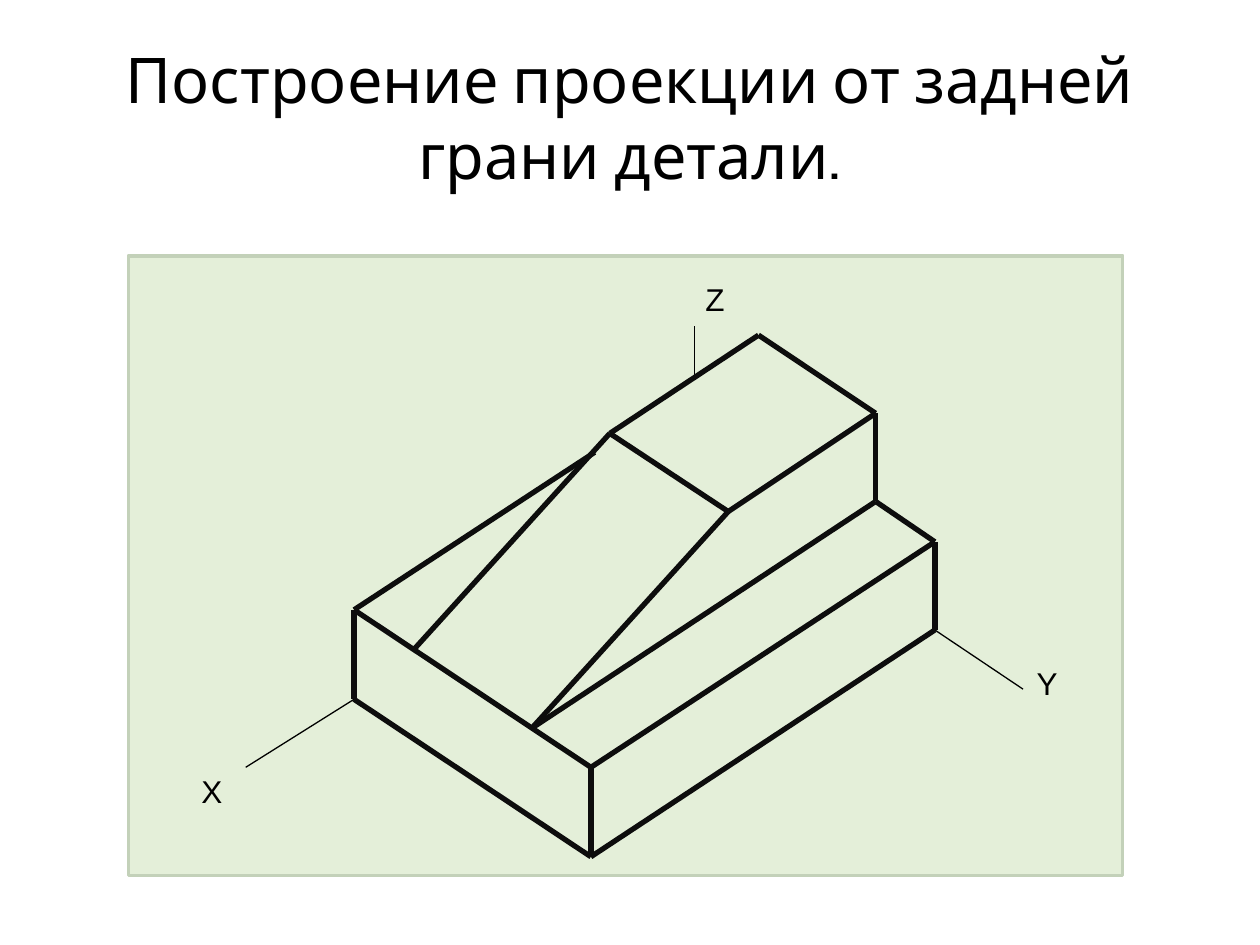
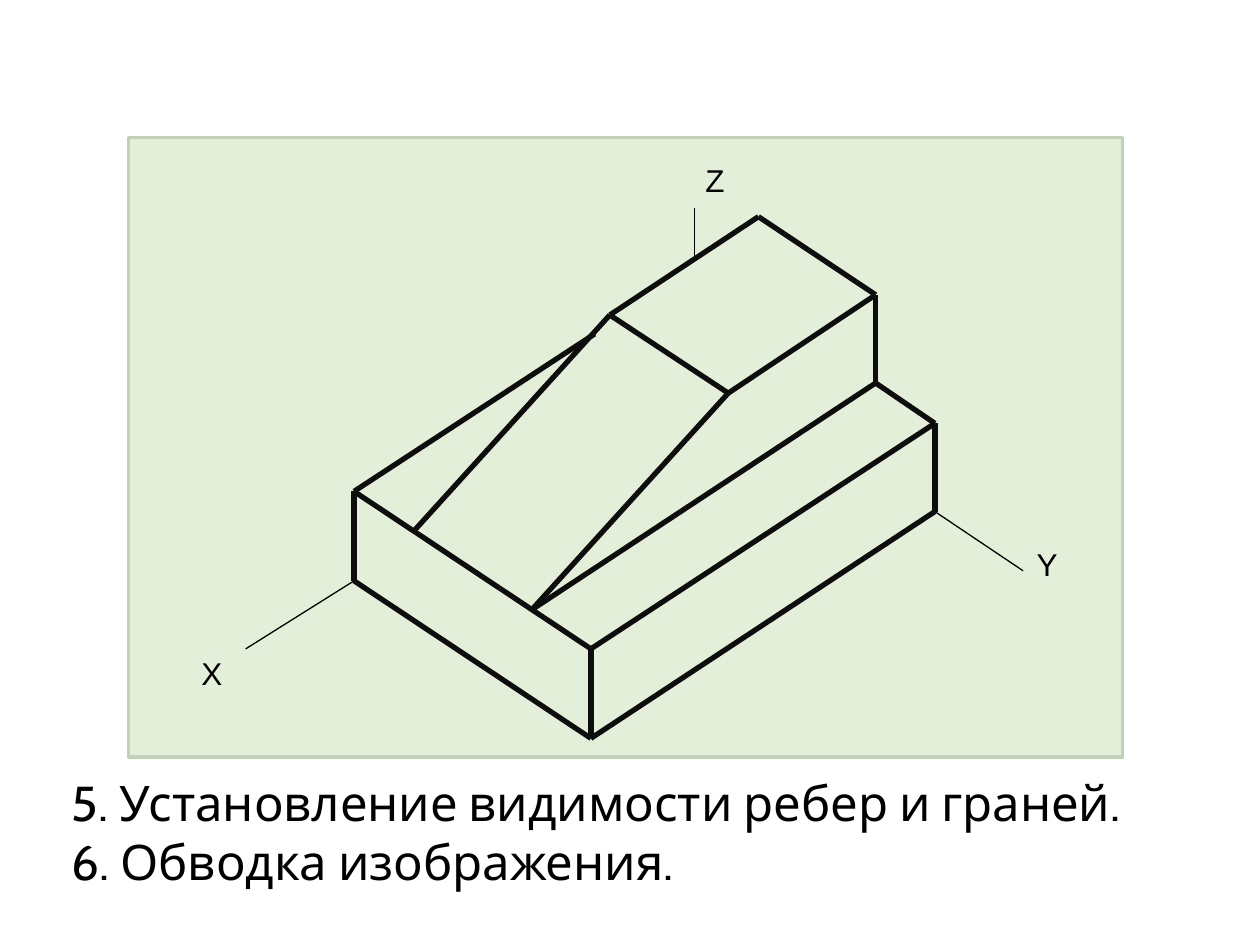
"""Build two slides that show an axonometric drawing of a stepped part."""
from typing import NamedTuple

from lxml import etree
from pptx import Presentation
from pptx import util as u
from pptx.dml.color import RGBColor
from pptx.enum import shapes as sh, text as tx
from pptx.oxml.ns import qn

COLORS = {"panel": "E4EFD9", "frame": "C3D1B9", "edge": "0D0D0D", "text": "000000"}
PANEL = (1.02, 7.89, 4.92)


class Point(NamedTuple):
    x: float
    y: float


class Edge(NamedTuple):
    start: Point
    end: Point


class Label(NamedTuple):
    text: str
    x: float
    y: float


class Block(NamedTuple):
    lines: list[str]
    box: tuple[float, float, float, float]
    size: int
    align: tx.PP_ALIGN


class Page(NamedTuple):
    top: float
    block: Block


BASE_LEFT = Point(1.79, 3.52)
BASE_FRONT = Point(3.67, 4.77)
BASE_RIGHT = Point(6.4, 2.97)
TOP_LEFT = Point(1.79, 2.81)
TOP_FRONT = Point(3.67, 4.06)
TOP_RIGHT = Point(6.4, 2.27)
TOP_HIDE = Point(3.7, 1.56)
STEP_BACK = Point(5.93, 1.95)
RAMP_LEFT = Point(2.26, 3.13)
RAMP_RIGHT = Point(3.2, 3.75)
ROOF_LEFT = Point(3.82, 1.41)
ROOF_FRONT = Point(4.76, 2.03)
ROOF_RIGHT = Point(5.93, 1.25)
ROOF_BACK = Point(5.0, 0.63)

AXES = [
    Edge(Point(4.49, 0.56), Point(4.49, 0.95)),
    Edge(Point(0.93, 4.06), BASE_LEFT),
    Edge(Point(7.1, 3.44), BASE_RIGHT),
]
EDGES = [
    Edge(BASE_RIGHT, TOP_RIGHT),
    Edge(STEP_BACK, TOP_RIGHT),
    Edge(STEP_BACK, ROOF_RIGHT),
    Edge(ROOF_RIGHT, ROOF_BACK),
    Edge(TOP_HIDE, TOP_LEFT),
    Edge(STEP_BACK, RAMP_RIGHT),
    Edge(TOP_RIGHT, TOP_FRONT),
    Edge(BASE_RIGHT, BASE_FRONT),
    Edge(ROOF_BACK, ROOF_LEFT),
    Edge(ROOF_RIGHT, ROOF_FRONT),
    Edge(ROOF_FRONT, ROOF_LEFT),
    Edge(TOP_FRONT, TOP_LEFT),
    Edge(BASE_FRONT, BASE_LEFT),
    Edge(TOP_LEFT, BASE_LEFT),
    Edge(TOP_FRONT, BASE_FRONT),
    Edge(ROOF_LEFT, RAMP_LEFT),
    Edge(ROOF_FRONT, RAMP_RIGHT),
]
LABELS = [Label("Z", 4.48, 0.14), Label("Y", 7.11, 3.19), Label("Х", 0.48, 4.05)]

PAGES = [
    Page(2.03, Block(["Построение проекции от задней грани детали."],
                     (0.5, 0.3, 9, 1.25), 36, tx.PP_ALIGN.CENTER)),
    Page(1.09, Block(["5. Установление видимости ребер и граней.", "6. Обводка изображения."],
                     (0.47, 6.1, 9, 1), 28, tx.PP_ALIGN.LEFT)),
]


def color(name: str) -> RGBColor:
    return RGBColor.from_string(COLORS[name])


def draw_text(slide, block: Block, font: str, wrap: bool = True) -> None:
    box = slide.shapes.add_textbox(*map(u.Inches, block.box))
    frame = box.text_frame
    frame.text = "\n".join(block.lines)
    frame.word_wrap = wrap
    frame.vertical_anchor = tx.MSO_ANCHOR.MIDDLE if wrap else tx.MSO_ANCHOR.TOP
    if not wrap:
        frame.auto_size = tx.MSO_AUTO_SIZE.SHAPE_TO_FIT_TEXT
    for par in frame.paragraphs:
        par.alignment = block.align
        for run in par.runs:
            run.font.name = font
            run.font.size = u.Pt(block.size)
            run.font.color.rgb = color("text")


def draw_panel(slide, top: float) -> None:
    left, width, height = PANEL
    panel = slide.shapes.add_shape(sh.MSO_SHAPE.RECTANGLE, *map(u.Inches, (left, top, width, height)))
    panel.shadow.inherit = False
    panel.fill.solid()
    panel.fill.fore_color.rgb = color("panel")
    panel.line.color.rgb = color("frame")
    panel.line.width = u.Pt(2)


def draw_edges(slide, edges: list[Edge], top: float, tone: str, width: float) -> None:
    group = slide.shapes.add_group_shape()
    left = PANEL[0]
    for start, end in edges:
        ends = (left + start.x, top + start.y, left + end.x, top + end.y)
        line = group.shapes.add_connector(sh.MSO_CONNECTOR.STRAIGHT, *map(u.Inches, ends))
        line.line.color.rgb = color(tone)
        line.line.width = u.Pt(width)
        etree.SubElement(line._element.spPr, qn("a:effectLst"))


def draw_part(slide, top: float) -> None:
    draw_panel(slide, top)
    draw_edges(slide, AXES, top, "text", 0.75)
    for label in LABELS:
        box = (PANEL[0] + label.x, top + label.y, 0.37, 0.4)
        draw_text(slide, Block([label.text], box, 18, tx.PP_ALIGN.LEFT), "Arial", wrap=False)
    draw_edges(slide, EDGES, top, "edge", 3)


def main() -> None:
    deck = Presentation()
    deck.slide_width, deck.slide_height = u.Inches(10), u.Inches(7.5)
    for page in PAGES:
        slide = deck.slides.add_slide(deck.slide_layouts[6])
        draw_part(slide, page.top)
        draw_text(slide, page.block, "Cabin")
    deck.save("out.pptx")


if __name__ == "__main__":
    main()
